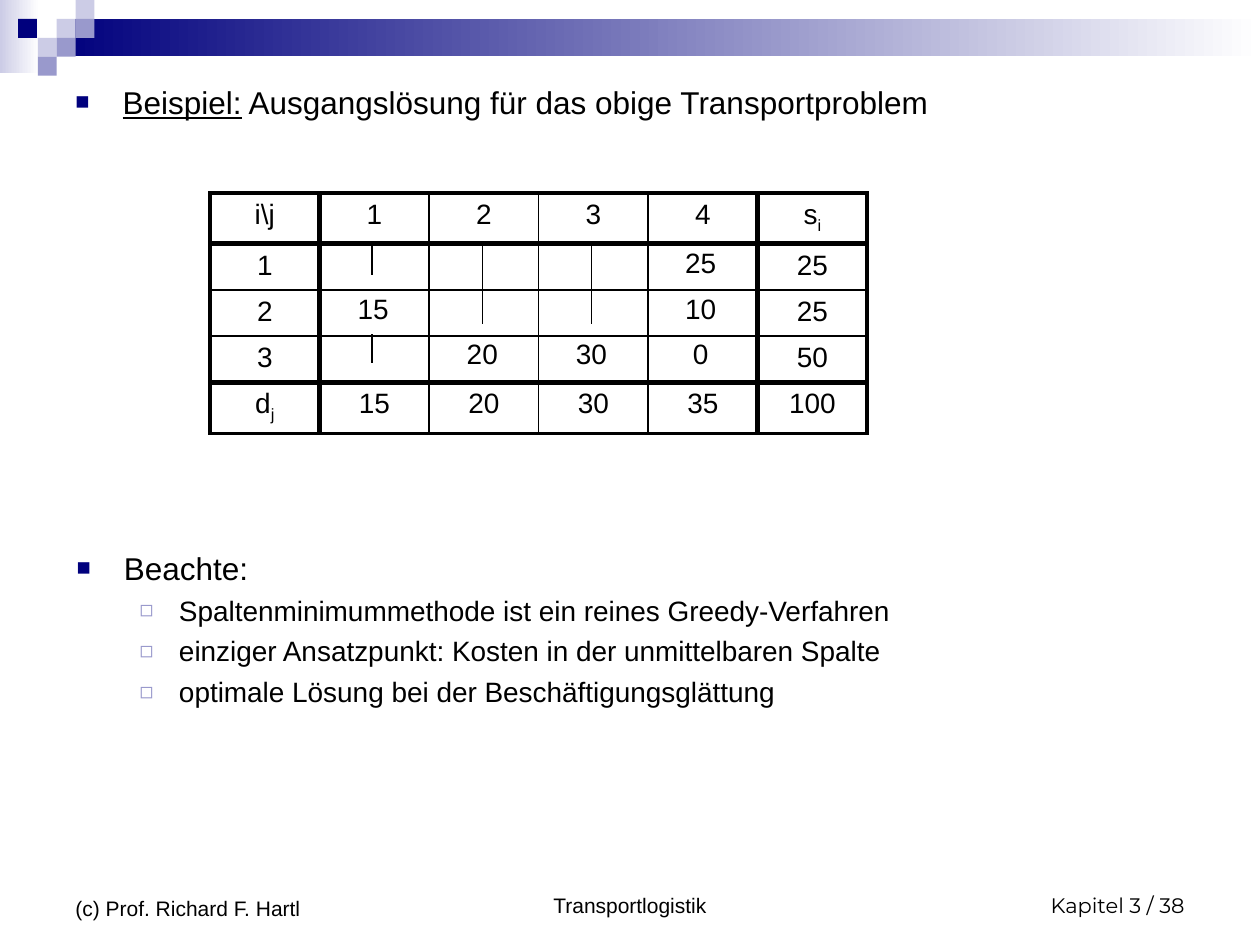
from dataclasses import dataclass
from typing import NamedTuple

from lxml.etree import SubElement
from pptx import Presentation
from pptx.dml.color import RGBColor
from pptx.enum.shapes import MSO_CONNECTOR, MSO_SHAPE
from pptx.enum.text import MSO_ANCHOR, PP_ALIGN
from pptx.oxml.ns import qn
from pptx.util import Pt


@dataclass(frozen=True)
class Theme:
    ink: str = "000000"
    navy: str = "00007D"
    mid: str = "9999CC"
    pale: str = "CCCCE6"
    white: str = "FFFFFF"
    font: str = "Arial"
    page_font: str = "Montserrat"
    head: float = 18
    body: float = 16
    foot: float = 12


class Box(NamedTuple):
    left: float
    top: float
    width: float
    height: float


class Tile(NamedTuple):
    box: Box
    fill: str
    fade: bool = False


class Bullet(NamedTuple):
    mark: str
    color: str
    scale: int
    left: float
    hang: float


class Foot(NamedTuple):
    box: Box
    text: str
    align: PP_ALIGN
    font: str


class Entry(NamedTuple):
    col: int
    row: int
    text: str


THEME = Theme()
SIDE = 10.8
TILES = [
    Tile(Box(0, 0, 22.4, 41.8), THEME.pale, True),
    Tile(Box(32.4, 10.8, 687.6, 21.4), THEME.navy, True),
    *(Tile(Box(left, top, SIDE, SIDE), fill) for left, top, fill in [
        (32.4, 10.8, THEME.pale), (43.2, 0, THEME.pale),
        (43.2, 10.8, THEME.mid), (21.6, 21.6, THEME.pale),
        (10.3, 10.8, THEME.navy), (32.4, 21.6, THEME.mid),
        (21.6, 32.4, THEME.mid)]),
]
MAIN = Bullet("■", THEME.navy, 75, 27, 27)
SUB = Bullet("◻", THEME.mid, 80, 58.5, 22.5)
FEET = [
    Foot(Box(246, 492, 228, 36), "Transportlogistik", PP_ALIGN.CENTER, THEME.font),
    Foot(Box(516, 492, 168, 36), "Kapitel 3 / 38", PP_ALIGN.RIGHT, THEME.page_font),
    Foot(Box(36, 492, 168, 37.5), "(c) Prof. Richard F. Hartl", PP_ALIGN.LEFT, THEME.font),
]
POINTS = [
    "Spaltenminimummethode ist ein reines Greedy-Verfahren",
    "einziger Ansatzpunkt: Kosten in der unmittelbaren Spalte",
    "optimale Lösung bei der Beschäftigungsglättung",
]
GRID = Box(120, 110.2, 375.6, 131.8)
ROWS = [
    ["i\\j", "1", "2", "3", "4", "s_i"],
    ["1", "", "", "", "", "25"],
    ["2", "", "", "", "", "25"],
    ["3", "", "", "", "", "50"],
    ["d_j", "15", "20", "30", "35", "100"],
]
# Top, height, top inset and side inset of the entries in each row
BANDS = [(133.9, 32.4, 6.5, 7.2), (162, 30.2, 4.3, 7.2), (185, 33.1, 7.2, 4.3)]
ENTRIES = [Entry(3, 0, "25"), Entry(3, 1, "10"), Entry(3, 2, "0"),
           Entry(0, 1, "15"), Entry(1, 2, "20"), Entry(2, 2, "30")]
LINE_TOP = 139.7


def rgb(code: str) -> RGBColor:
    return RGBColor.from_string(code)


def write(par, text: str, *, size: float = THEME.body, font: str = THEME.font,
          under: bool = False, base: int = 0) -> None:
    run = par.add_run()
    run.text = text
    face = run.font
    face.size, face.name = Pt(size), font
    face.color.rgb = rgb(THEME.ink)
    if under:
        face.underline = True
    if base:
        face._element.set("baseline", str(base * 1000))


def add_box(slide, box: Box, anchor=MSO_ANCHOR.TOP):
    shape = slide.shapes.add_textbox(*map(Pt, box))
    shape.text_frame.word_wrap = True
    shape.text_frame.vertical_anchor = anchor
    return shape


def add_mark(par, mark: Bullet, space: float = 0) -> None:
    par.space_before = Pt(space)
    props = par._p.get_or_add_pPr()
    props.set("marL", str(Pt(mark.left)))
    props.set("indent", str(-Pt(mark.hang)))
    color = SubElement(props, qn("a:buClr"))
    SubElement(color, qn("a:srgbClr"), val=mark.color)
    SubElement(props, qn("a:buSzPct"), val=str(mark.scale * 1000))
    SubElement(props, qn("a:buFont"), typeface=THEME.font)
    SubElement(props, qn("a:buChar"), char=mark.mark)


def add_tile(slide, tile: Tile) -> None:
    shape = slide.shapes.add_shape(MSO_SHAPE.RECTANGLE, *map(Pt, tile.box))
    shape.shadow.inherit = False
    shape.line.fill.background()
    if tile.fade:
        shape.fill.gradient()
        shape.fill.gradient_angle = 0
        for stop, code in zip(shape.fill.gradient_stops, (tile.fill, THEME.white)):
            stop.color.rgb = rgb(code)
    else:
        shape.fill.solid()
        shape.fill.fore_color.rgb = rgb(tile.fill)


def edge(index: int, count: int) -> float:
    """Width of a grid line: outer frame, next to the margin cells, or inner."""
    if index in (0, count):
        return 2.25
    return 3 if index in (1, count - 1) else 1


def add_edge(cell, tag: str, width: float) -> None:
    line = SubElement(cell._tc.get_or_add_tcPr(), qn(f"a:{tag}"), w=str(Pt(width)))
    fill = SubElement(line, qn("a:solidFill"))
    SubElement(fill, qn("a:srgbClr"), val=THEME.ink)


def add_grid(slide) -> None:
    high, wide = len(ROWS), len(ROWS[0])
    table = slide.shapes.add_table(high, wide, *map(Pt, GRID)).table
    table.first_row = table.horz_banding = False
    for row in table.rows:
        row.height = Pt(GRID.height / high)
    for r, texts in enumerate(ROWS):
        for c, text in enumerate(texts):
            cell = table.cell(r, c)
            for tag, width in [("lnL", edge(c, wide)), ("lnR", edge(c + 1, wide)),
                               ("lnT", edge(r, high)), ("lnB", edge(r + 1, high))]:
                add_edge(cell, tag, width)
            cell.fill.background()
            par = cell.text_frame.paragraphs[0]
            par.alignment = PP_ALIGN.CENTER
            name, _, index = text.partition("_")
            if name:
                write(par, name)
            else:
                SubElement(par._p, qn("a:endParaRPr"), sz=str(int(THEME.body * 100)))
            if index:
                write(par, index, base=-25)


def add_entry(slide, entry: Entry):
    top, height, inset, side = BANDS[entry.row]
    shape = add_box(slide, Box(184.4 + 62.4 * entry.col, top, 57.6, height))
    frame = shape.text_frame
    frame.margin_top, frame.margin_bottom = Pt(inset), Pt(6.5)
    frame.margin_left = frame.margin_right = Pt(side)
    frame.paragraphs[0].alignment = PP_ALIGN.CENTER
    write(frame.paragraphs[0], entry.text)
    return shape


def add_line(slide, x: float, start: float, end: float):
    line = slide.shapes.add_connector(
        MSO_CONNECTOR.STRAIGHT, Pt(x), Pt(start), Pt(x), Pt(end))
    line.line.width = Pt(0.75)
    line.line.color.rgb = rgb(THEME.ink)
    SubElement(line._element.spPr, qn("a:effectLst"))
    return line


def main() -> None:
    deck = Presentation()
    deck.slide_width, deck.slide_height = Pt(720), Pt(540)
    slide = deck.slides.add_slide(deck.slide_layouts[6])
    for tile in TILES:
        add_tile(slide, tile)
    for foot in FEET:
        par = add_box(slide, foot.box, MSO_ANCHOR.BOTTOM).text_frame.paragraphs[0]
        par.alignment = foot.align
        write(par, foot.text, size=THEME.foot, font=foot.font)

    title = add_box(slide, Box(36, 43.8, 648, 33.8)).text_frame.paragraphs[0]
    add_mark(title, MAIN)
    write(title, "Beispiel:", size=THEME.head, under=True)
    write(title, " Ausgangslösung für das obige Transportproblem", size=THEME.head)

    notes = add_box(slide, Box(36.7, 310, 648, 108)).text_frame
    add_mark(notes.paragraphs[0], MAIN)
    write(notes.paragraphs[0], "Beachte:", size=THEME.head)
    for text in POINTS:
        par = notes.add_paragraph()
        add_mark(par, SUB, 4)
        write(par, text)

    add_grid(slide)
    boxes = {entry: add_entry(slide, entry) for entry in ENTRIES}
    for start, end in [(157, LINE_TOP), (207.4, 190.8)]:
        add_line(slide, 212.6, start, end)
    for entry, box in boxes.items():
        if entry.col in (1, 2):
            x = (box.left + box.width / 2) / Pt(1)
            add_line(slide, x, BANDS[entry.row][0], LINE_TOP).begin_connect(box, 0)
    deck.save("out.pptx")


if __name__ == "__main__":
    main()
